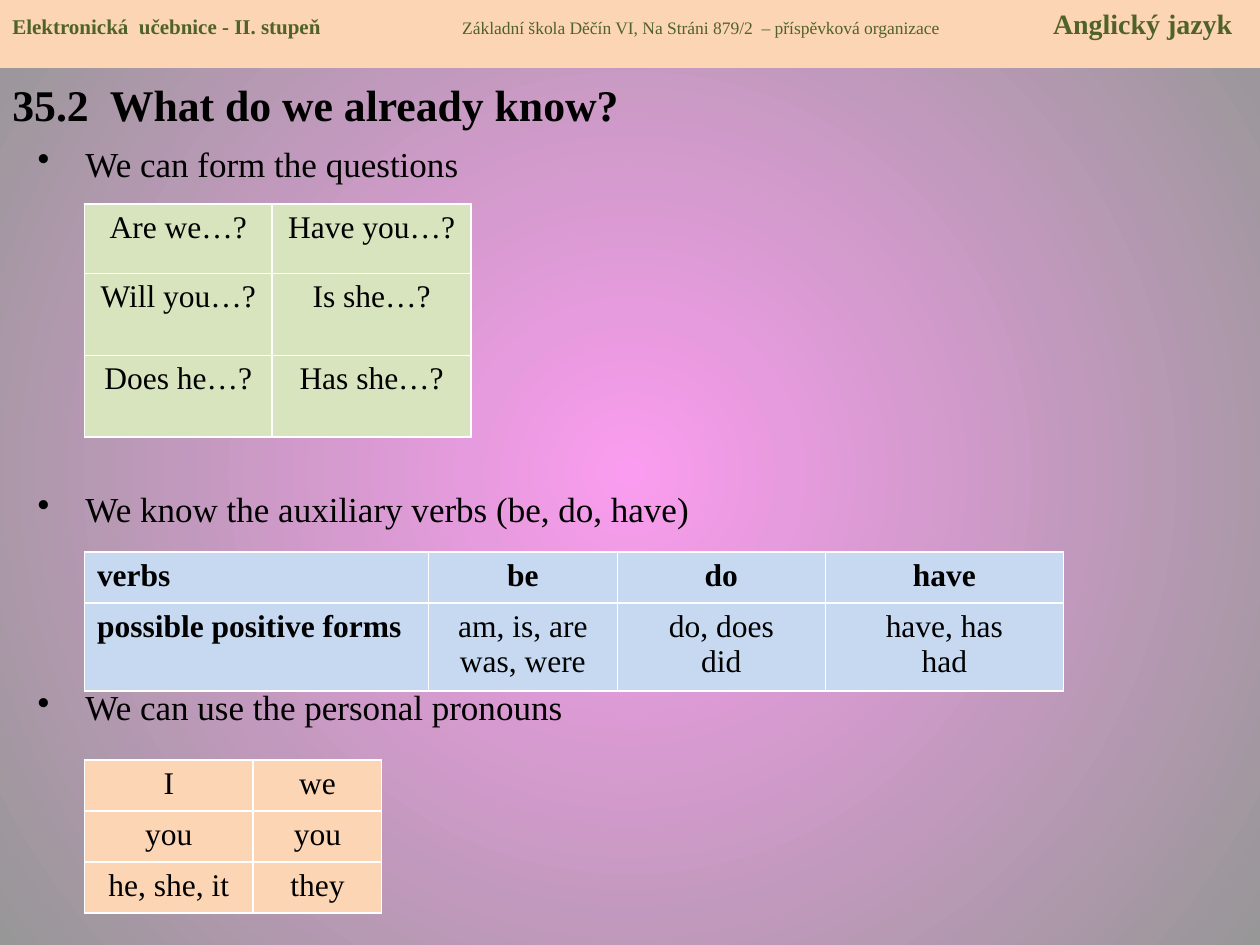
from pptx import Presentation
from pptx.dml.color import RGBColor
from pptx.enum.shapes import MSO_SHAPE
from pptx.enum.text import MSO_ANCHOR, PP_ALIGN
from pptx.oxml.ns import qn
from pptx.util import Inches, Pt
from lxml.etree import SubElement

COLUMNS, ROWS = 100, 75
WHITE, BLACK, PEACH, GREEN, BLUE, OLIVE = (
    "FFFFFF", "000000", "FCD5B5", "D7E4BD", "C6D9F1", "4F6228")


def color(value):
    return RGBColor.from_string(value)


class Deck:
    font = "Times New Roman"

    def __init__(self):
        self.prs = Presentation()
        self.prs.slide_width, self.prs.slide_height = Inches(10), Inches(7.5)
        self.s = self.prs.slides.add_slide(self.prs.slide_layouts[6])

    def x(self, columns):
        return round(self.prs.slide_width * columns / COLUMNS)

    def y(self, rows):
        return round(self.prs.slide_height * rows / ROWS)

    def box(self, left, top, width, height):
        return self.x(left), self.y(top), self.x(width), self.y(height)

    def style(self, target, size, ink=BLACK, bold=False):
        font = target.font
        font.name, font.size, font.bold = self.font, Pt(size), bold
        font.color.rgb = color(ink)

    def background(self, *colors):
        fill = self.s.background.fill
        fill.gradient()
        for stop, value in zip(fill.gradient_stops, colors):
            stop.color.rgb = color(value)
        grad = self.s.background._cSld.find(".//" + qn("a:gradFill"))
        grad.remove(grad.find(qn("a:lin")))
        radial = SubElement(grad, qn("a:path"), path="circle")
        SubElement(radial, qn("a:fillToRect"), dict.fromkeys("ltrb", "50000"))

    def banner(self, area, fill, parts):
        sp = self.s.shapes.add_shape(MSO_SHAPE.RECTANGLE, *self.box(*area))
        sp.shadow.inherit = False
        sp.fill.solid()
        sp.fill.fore_color.rgb = color(fill)
        sp.line.fill.background()
        tf = sp.text_frame
        tf.vertical_anchor = MSO_ANCHOR.TOP
        p = tf.paragraphs[0]
        p.alignment = PP_ALIGN.LEFT
        tabs = SubElement(p._p.get_or_add_pPr(), qn("a:tabLst"))
        for i, (text, size, bold, tab) in enumerate(parts):
            if i:
                SubElement(tabs, qn("a:tab"), pos=str(self.x(tab)), algn="l")
            r = p.add_run()
            r.text = ("\t" if i else "") + text
            self.style(r, size, OLIVE, bold)

    def text(self, area, items, size, bold=False, indent=0):
        tf = self.s.shapes.add_textbox(*self.box(*area)).text_frame
        tf.word_wrap = True
        for i, (text, before) in enumerate(items):
            p = tf.add_paragraph() if i else tf.paragraphs[0]
            p.text, p.space_before = text, Pt(before)
            self.style(p, size, bold=bold)
            if indent:
                pPr = p._p.get_or_add_pPr()
                pPr.set("marL", str(self.x(indent)))
                pPr.set("indent", str(-self.x(indent)))
                bullet = SubElement(pPr, qn("a:buChar"), char="•")
                pPr.remove(bullet)
                pPr.insert_element_before(bullet, "a:tabLst", "a:defRPr", "a:extLst")

    def borders(self, cell):
        tcPr = cell._tc.get_or_add_tcPr()
        for i, side in enumerate(("lnL", "lnR", "lnT", "lnB")):
            ln = SubElement(tcPr, qn("a:" + side), w=str(Pt(1)))
            SubElement(SubElement(ln, qn("a:solidFill")), qn("a:srgbClr"), val=WHITE)
            tcPr.remove(ln)
            tcPr.insert(i, ln)

    def table(self, left, top, widths, heights, fill, rows, headed=False):
        area = self.box(left, top, sum(widths), sum(heights))
        tbl = self.s.shapes.add_table(len(rows), len(widths), *area).table
        tbl.first_row = tbl.horz_banding = False
        for column, width in zip(tbl.columns, widths):
            column.width = self.x(width)
        for i, (row, height) in enumerate(zip(rows, heights)):
            tbl.rows[i].height = self.y(height)
            for j, text in enumerate(row):
                cell = tbl.cell(i, j)
                cell.text = text
                cell.fill.solid()
                cell.fill.fore_color.rgb = color(fill)
                self.borders(cell)
                for p in cell.text_frame.paragraphs:
                    p.alignment = PP_ALIGN.LEFT if headed and j == 0 else PP_ALIGN.CENTER
                    self.style(p, 18, bold=headed and 0 in (i, j))


def main():
    deck = Deck()
    deck.background("FA9CEF", "979797")
    deck.text((0, 5.7, 92.5, 69.3), [("35.2  What do we already know?", 0)], 25, bold=True)
    deck.banner((0, 0, 100, 5.4), PEACH, [
        ("Elektronická  učebnice - II. stupeň", 12, True, 0),
        ("Základní škola Děčín VI, Na Stráni 879/2  – příspěvková organizace", 10, False, 35.7),
        ("Anglický jazyk", 16, True, 82.6),
    ])
    deck.text((2, 10.8, 96.1, 63), [
        ("We can form the questions", 0),
        ("We know the auxiliary verbs (be, do, have)", 173.5),
        ("We can use the personal pronouns", 89),
    ], 20, indent=3.8)
    deck.table(6.7, 16.2, [14.9, 15.8], [5.5, 6.5, 6.5], GREEN, [
        ["Are we…?", "Have you…?"],
        ["Will you…?", "Is she…?"],
        ["Does he…?", "Has she…?"],
    ])
    deck.table(6.7, 60.3, [13.4, 10.2], [4.05] * 3, PEACH, [
        ["I", "we"],
        ["you", "you"],
        ["he, she, it", "they"],
    ])
    deck.table(6.7, 43.8, [27.3, 15, 16.5, 18.9], [4.05, 6.5], BLUE, [
        ["verbs", "be", "do", "have"],
        ["possible positive forms", "am, is, are\nwas, were", "do, does\ndid", "have, has\nhad"],
    ], headed=True)
    deck.prs.save("out.pptx")


if __name__ == "__main__":
    main()
